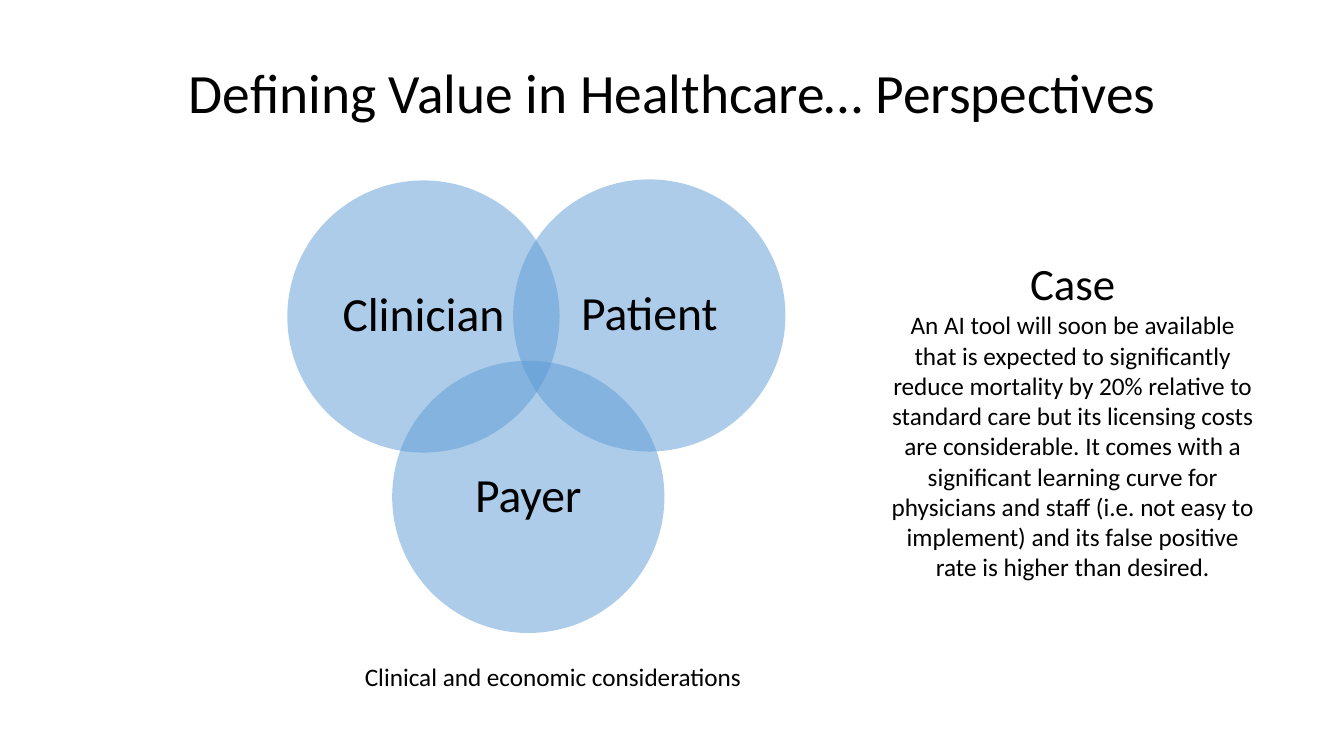
import pptx
import pptx.util
from pptx.dml.color import RGBColor
from pptx.enum.shapes import MSO_SHAPE
from pptx.enum.text import MSO_ANCHOR, MSO_AUTO_SIZE, PP_ALIGN
from pptx.oxml.ns import qn
from pptx.util import Inches
from lxml import etree

BLACK = RGBColor(0x00, 0x00, 0x00)
BLUE = RGBColor(0x5B, 0x9B, 0xD5)
FONT = "Calibri"
DIAMETER = 2.7
LABEL_INSET = 0.395  # edge of the square inscribed in a circle

CASE = (
    "An AI tool will soon be available that is expected to significantly "
    "reduce mortality by 20% relative to standard care but its licensing "
    "costs are considerable. It comes with a significant learning curve for "
    "physicians and staff (i.e. not easy to implement) and its false "
    "positive rate is higher than desired."
)


class SlideBuilder:
    def __init__(self, s):
        self.s = s

    def style(self, p, size, spacing=1.0):
        p.alignment = PP_ALIGN.CENTER
        p.line_spacing = spacing
        p.font.name = FONT
        p.font.size = pptx.util.Pt(size)
        p.font.color.rgb = BLACK

    def title(self, text, left, top, width, height):
        sp = self.s.shapes.title
        sp.left, sp.top = Inches(left), Inches(top)
        sp.width, sp.height = Inches(width), Inches(height)
        tf = sp.text_frame
        tf.text = text
        tf.vertical_anchor = MSO_ANCHOR.MIDDLE
        self.style(tf.paragraphs[0], 39.6, 0.9)

    def text(self, lines, left, top, width, height, spacing=1.0):
        """Add a centred text box from (text, size) pairs."""
        sp = self.s.shapes.add_textbox(
            Inches(left), Inches(top), Inches(width), Inches(height))
        tf = sp.text_frame
        tf.word_wrap = True
        for i, (text, size) in enumerate(lines):
            p = tf.add_paragraph() if i else tf.paragraphs[0]
            p.text = text
            self.style(p, size, spacing)
        return tf

    def circle(self, left, top):
        sp = self.s.shapes.add_shape(
            MSO_SHAPE.OVAL, Inches(left), Inches(top),
            Inches(DIAMETER), Inches(DIAMETER))
        sp.shadow.inherit = False
        sp.fill.solid()
        sp.fill.fore_color.rgb = BLUE
        sp.line.fill.background()
        color = sp.fill._xPr.find(qn("a:solidFill"))[0]
        etree.SubElement(color, qn("a:alpha")).set("val", "50000")

    def perspective(self, label, left, top):
        self.circle(left, top)
        side = DIAMETER - 2 * LABEL_INSET
        tf = self.text([(label, 34)], left + LABEL_INSET, top + LABEL_INSET,
                       side, side, spacing=0.9)
        tf.vertical_anchor = MSO_ANCHOR.MIDDLE
        tf.margin_left = tf.margin_right = Inches(0.13)
        tf.margin_top = tf.margin_bottom = Inches(0.13)


def main():
    prs = pptx.Presentation()
    prs.slide_width, prs.slide_height = Inches(13.33), Inches(7.5)
    slide = SlideBuilder(prs.slides.add_slide(prs.slide_layouts[5]))

    # Title
    slide.title("Defining Value in Healthcare… Perspectives",
                1.67, 0.42, 10, 1.05)

    # Overlapping perspectives
    for label, left, top in (("Clinician", 2.85, 1.79),
                             ("Payer", 3.89, 3.58),
                             ("Patient", 5.09, 1.78)):
        slide.perspective(label, left, top)

    # Case description and caption
    for lines, box in (
            ([("Case", 32), (CASE, 18)], (8.71, 2.49, 3.86, 3.37)),
            ([("Clinical and economic considerations", 18)],
             (2.57, 6.51, 5.83, 0.4))):
        slide.text(lines, *box).auto_size = MSO_AUTO_SIZE.SHAPE_TO_FIT_TEXT

    prs.save("out.pptx")


if __name__ == "__main__":
    main()
